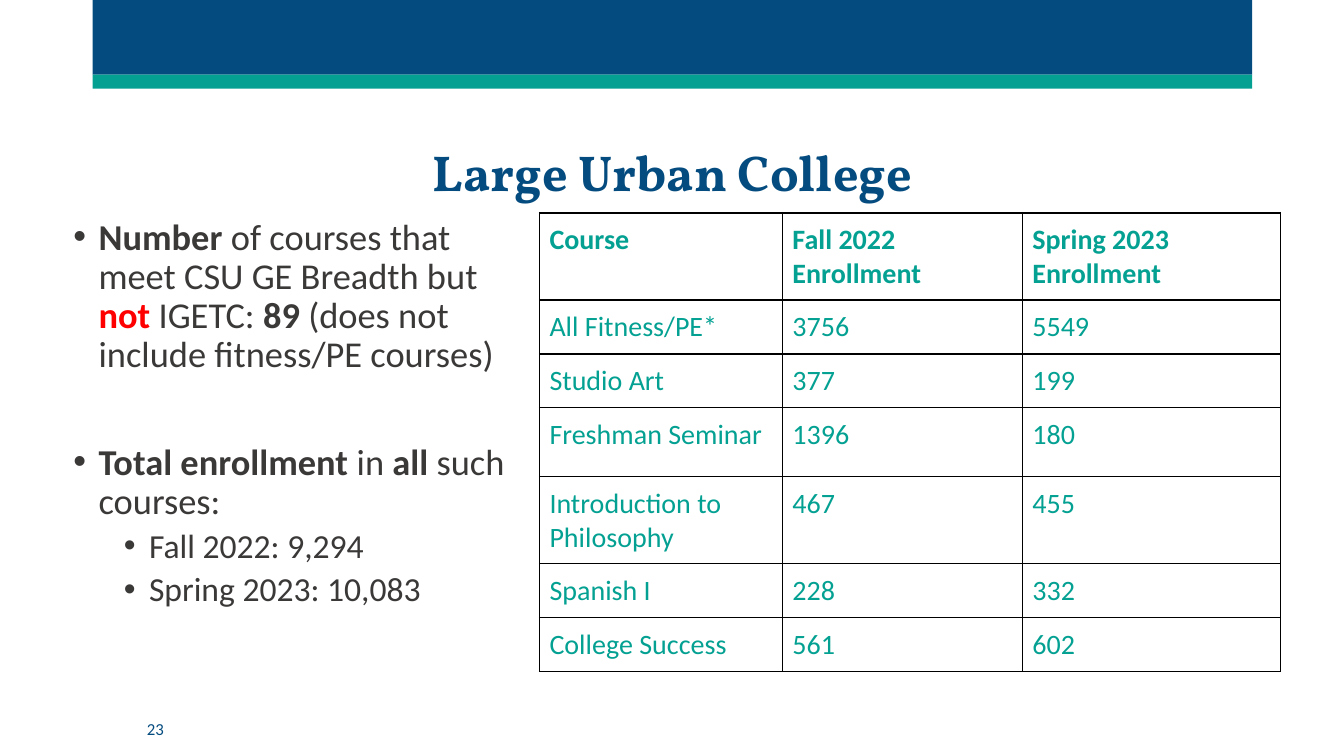
from lxml import etree
from pptx import Presentation, util as u
from pptx.dml.color import RGBColor
from pptx.enum import shapes, text
from pptx.oxml.ns import qn

NAVY = RGBColor(0x04, 0x4C, 0x7F)
TEAL = RGBColor(0x04, 0xA1, 0x93)
GREY = RGBColor(0x3B, 0x38, 0x38)
RED = RGBColor(0xFF, 0x00, 0x00)

MARGIN, BAND_W = 0.92, 11.5


def add_run(p, words, size, color, bold=False, name="Calibri"):
    r = p.add_run()
    r.text = words
    r.font.size = u.Pt(size)
    r.font.name = name
    r.font.bold = bold
    r.font.color.rgb = color


def add_border(cell, side, width):
    tcPr = cell._tc.get_or_add_tcPr()
    ln = etree.SubElement(tcPr, qn(f"a:{side}"), w=str(u.Pt(width)))
    fill = etree.SubElement(ln, qn("a:solidFill"))
    etree.SubElement(fill, qn("a:srgbClr"), val="000000")


prs = Presentation()
prs.slide_width, prs.slide_height = u.Inches(13.33), u.Inches(7.5)
s = prs.slides.add_slide(prs.slide_layouts[5])

# Header bands
for top, height, color in [(0, 0.74, NAVY), (0.74, 0.14, TEAL)]:
    sp = s.shapes.add_shape(shapes.MSO_SHAPE.RECTANGLE, u.Inches(MARGIN),
                            u.Inches(top), u.Inches(BAND_W), u.Inches(height))
    sp.fill.solid()
    sp.fill.fore_color.rgb = color
    sp.line.fill.background()
    sp.shadow.inherit = False

# Title
title = s.shapes.title
title.left, title.top = u.Inches(MARGIN), u.Inches(1.11)
title.width, title.height = u.Inches(BAND_W), u.Inches(1.25)
tf = title.text_frame
tf.vertical_anchor = text.MSO_ANCHOR.MIDDLE
p = tf.paragraphs[0]
p.alignment = text.PP_ALIGN.CENTER
p.line_spacing = 0.9
add_run(p, "Large Urban College", 36, NAVY, True, "Vollkorn")

# Bullets: level, space before, runs of (words, bold, color)
bullets = [
    (0, 0, [("Number ", True, GREY),
            ("of courses that meet CSU GE Breadth but ", False, GREY),
            ("not", True, RED),
            (" IGETC: ", False, GREY),
            ("89", True, GREY),
            (" (does not include fitness/PE courses)", False, GREY)]),
    (0, 48.5, [("Total enrollment ", True, GREY),
               ("in ", False, GREY),
               ("all", True, GREY),
               (" such courses:", False, GREY)]),
    (1, 5, [("Fall 2022: 9,294", False, GREY)]),
    (1, 5, [("Spring 2023: 10,083", False, GREY)]),
]
body = s.shapes.add_textbox(u.Inches(0.63), u.Inches(2.12),
                            u.Inches(4.73), u.Inches(4.51))
tf = body.text_frame
tf.word_wrap = True
for i, (level, before, runs) in enumerate(bullets):
    p = tf.paragraphs[0] if i == 0 else tf.add_paragraph()
    pPr = p._p.get_or_add_pPr()
    pPr.set("marL", str(u.Inches(0.25 + 0.5 * level)))
    pPr.set("indent", str(u.Inches(-0.25)))
    etree.SubElement(pPr, qn("a:buFont"), typeface="Arial")
    etree.SubElement(pPr, qn("a:buChar"), char="•")
    p.level = level
    p.line_spacing = 0.9
    p.space_before = u.Pt(before)
    for words, bold, color in runs:
        add_run(p, words, 26 - 2 * level, color, bold)

# Enrollment table
rows = [
    ("Course", "Fall 2022 Enrollment", "Spring 2023 Enrollment"),
    ("All Fitness/PE*", "3756", "5549"),
    ("Studio Art", "377", "199"),
    ("Freshman Seminar", "1396", "180"),
    ("Introduction to Philosophy", "467", "455"),
    ("Spanish I", "228", "332"),
    ("College Success", "561", "602"),
]
col_widths = [2.41, 2.38, 2.56]
row_heights = [0.64, 0.44, 0.44, 0.68, 0.68, 0.44, 0.44]
table = s.shapes.add_table(len(rows), len(col_widths), u.Inches(5.35), u.Inches(2.11),
                           u.Inches(sum(col_widths)), u.Inches(4.51)).table
table.horz_banding = False
for col, width in zip(table.columns, col_widths):
    col.width = u.Inches(width)
for i, (row, height) in enumerate(zip(rows, row_heights)):
    table.rows[i].height = u.Inches(height)
    for j, words in enumerate(row):
        cell = table.cell(i, j)
        cell.margin_left = cell.margin_right = u.Inches(0.1)
        cell.margin_top = cell.margin_bottom = u.Inches(0.1)
        add_border(cell, "lnL", 1)
        add_border(cell, "lnR", 1)
        add_border(cell, "lnT", 1.5 if i <= 1 else 1)
        add_border(cell, "lnB", 1.5 if i == 0 else 1)
        cell.fill.background()
        add_run(cell.text_frame.paragraphs[0], words, 20, TEAL, i == 0)

# Slide number
number = s.shapes.add_textbox(u.Inches(1.36), u.Inches(7.1),
                              u.Inches(0.9), u.Inches(0.25))
tf = number.text_frame
tf.word_wrap = True
tf.vertical_anchor = text.MSO_ANCHOR.MIDDLE
add_run(tf.paragraphs[0], "23", 12, NAVY)

prs.save("out.pptx")
